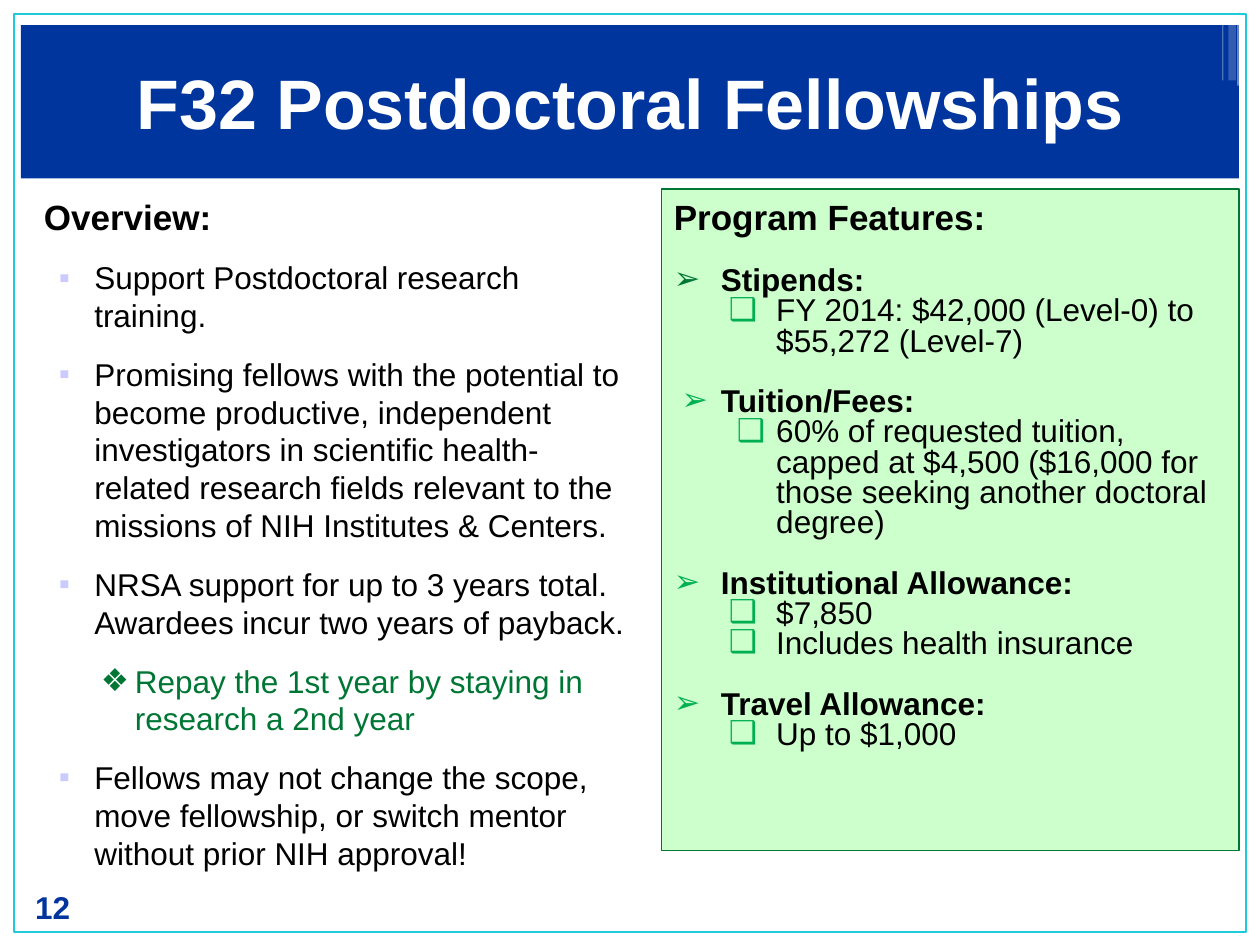
import pptx
import pptx.dml.color
import pptx.enum.shapes
import pptx.enum.text
import pptx.oxml
import pptx.oxml.ns
import pptx.util
from lxml import etree

Pt = pptx.util.Pt
qn = pptx.oxml.ns.qn
ALIGN = pptx.enum.text.PP_ALIGN
ANCHOR = pptx.enum.text.MSO_ANCHOR

COLORS = {
    "white": "FFFFFF",
    "black": "000000",
    "navy": "00359E",
    "frame": "1FCBDB",
    "panel": "CCFFCC",
    "forest": "007635",
    "green": "00B050",
    "lavender": "CBCBFF",
}

# Corner strips: left, width, height in points and opacity in percent
STRIPS = [
    (715.7, 4.3, 49, 65),
    (712.1, 2.2, 49, 65),
    (710.6, 0.7, 49, 60),
    (707, 2.2, 49, 40),
    (702, 4.3, 46, 20),
    (698.4, 0.7, 46, 30),
]

# Bullet styles: character, colour, left margin and hanging indent in points
SQUARE = ("▪", "lavender", 28.8, -20.2)
DIAMOND = ("❖", "forest", 52, -19.5)

OVERVIEW = [
    (SQUARE, "Support Postdoctoral research training."),
    (SQUARE, "Promising fellows with the potential to become productive, "
             "independent investigators in scientific health-related research "
             "fields relevant to the missions of NIH Institutes & Centers."),
    (SQUARE, "NRSA support for up to 3 years total. "
             "Awardees incur two years of payback."),
    (DIAMOND, "Repay the 1st year by staying in research a 2nd year"),
    (SQUARE, "Fellows may not change the scope, move fellowship, or switch "
             "mentor without prior NIH approval!"),
]

# Feature, arrow colour, hanging indent, details
FEATURES = [
    ("Stipends:", "forest", -27,
     ["FY 2014: $42,000 (Level-0) to $55,272 (Level-7)"]),
    ("Tuition/Fees:", "green", -22.5,
     ["60% of requested tuition, capped at $4,500 ($16,000 for those seeking "
      "another doctoral degree)"]),
    ("Institutional Allowance:", "green", -27,
     ["$7,850", "Includes health insurance"]),
    ("Travel Allowance:", "green", -27, ["Up to $1,000"]),
]


def color(name):
    return pptx.dml.color.RGBColor.from_string(COLORS[name])


def set_attributes(target, values):
    for name, value in values.items():
        setattr(target, name, value)


def prepare_frame(shape, anchor):
    set_attributes(shape.text_frame, {
        "word_wrap": True,
        "auto_size": pptx.enum.text.MSO_AUTO_SIZE.NONE,
        "vertical_anchor": anchor,
    })


def add_bullet(paragraph, bullet):
    character, color_name, margin, indent = bullet
    properties = paragraph._p.get_or_add_pPr()
    properties.set("marL", str(Pt(margin)))
    properties.set("indent", str(Pt(indent)))
    bullet_color = etree.SubElement(properties, qn("a:buClr"))
    etree.SubElement(bullet_color, qn("a:srgbClr"), val=COLORS[color_name])
    etree.SubElement(properties, qn("a:buFont"), typeface="Arial")
    etree.SubElement(properties, qn("a:buChar"), char=character)


def add_paragraph(shape, text, size=18, bold=False, color_name="black",
                  bullet=None, **spacing):
    """Fill the empty first paragraph, or append a new one."""
    frame = shape.text_frame
    paragraph = frame.add_paragraph() if frame.text else frame.paragraphs[0]
    if bullet:
        add_bullet(paragraph, bullet)
    set_attributes(paragraph, {"alignment": ALIGN.LEFT, **spacing})
    run = paragraph.add_run()
    run.text = text
    set_attributes(run.font, {"name": "Arial", "size": Pt(size), "bold": bold})
    run.font.color.rgb = color(color_name)


def add_rectangle(slide, box, fill_name=None, line_name=None, line_width=1):
    shape = slide.shapes.add_shape(
        pptx.enum.shapes.MSO_SHAPE.RECTANGLE, *map(Pt, box))
    shape.shadow.inherit = False
    if fill_name:
        shape.fill.solid()
        shape.fill.fore_color.rgb = color(fill_name)
    else:
        shape.fill.background()
    if line_name:
        shape.line.color.rgb = color(line_name)
        shape.line.width = Pt(line_width)
    else:
        shape.line.fill.background()
    return shape


def add_corner_strips(slide):
    for left, width, height, opacity in STRIPS:
        strip = add_rectangle(slide, (left, 0, width, height), "white")
        fill_color = strip._element.spPr.find(
            qn("a:solidFill")).find(qn("a:srgbClr"))
        etree.SubElement(fill_color, qn("a:alpha"), val=str(opacity * 1000))


def add_text_box(slide, box, anchor):
    shape = slide.shapes.add_textbox(*map(Pt, box))
    prepare_frame(shape, anchor)
    return shape


def format_title(slide, text):
    title = slide.shapes.title
    set_attributes(title, {"left": Pt(12), "top": Pt(14.4),
                           "width": Pt(696), "height": Pt(87.5)})
    title.fill.solid()
    title.fill.fore_color.rgb = color("navy")
    prepare_frame(title, ANCHOR.MIDDLE)
    add_paragraph(title, text, 40, True, "white", alignment=ALIGN.CENTER)


def add_overview(slide):
    box = add_text_box(slide, (18, 108, 348, 384), ANCHOR.TOP)
    add_paragraph(box, "Overview:", 20, True, space_after=Pt(6))
    for bullet, text in OVERVIEW:
        color_name = "forest" if bullet is DIAMOND else "black"
        add_paragraph(box, text, color_name=color_name, bullet=bullet,
                      space_before=Pt(6), space_after=Pt(6))


def add_features(slide):
    panel = add_rectangle(slide, (378, 108, 330, 378), "panel", "forest")
    prepare_frame(panel, ANCHOR.TOP)
    add_paragraph(panel, "Program Features:", 20, True)
    for name, arrow_color, indent, details in FEATURES:
        add_paragraph(panel, name, bold=True,
                      bullet=("➢", arrow_color, 26.9, indent),
                      line_spacing=0.8, space_before=Pt(17.3))
        for detail in details:
            add_paragraph(panel, detail, bullet=("❑", "green", 58.5, indent),
                          line_spacing=0.8)


def main():
    presentation = pptx.Presentation()
    presentation.slide_width = Pt(720)
    presentation.slide_height = Pt(540)
    slide = presentation.slides.add_slide(presentation.slide_layouts[5])
    add_corner_strips(slide)
    add_rectangle(slide, (8, 8, 704, 524.7), line_name="frame", line_width=1)
    format_title(slide, "F32 Postdoctoral Fellowships")
    add_overview(slide)
    add_features(slide)
    page_number = add_text_box(slide, (7, 503.6, 40.2, 29), ANCHOR.BOTTOM)
    add_paragraph(page_number, "12", 18, True, "navy", alignment=ALIGN.RIGHT)
    presentation.save("out.pptx")


if __name__ == "__main__":
    main()
